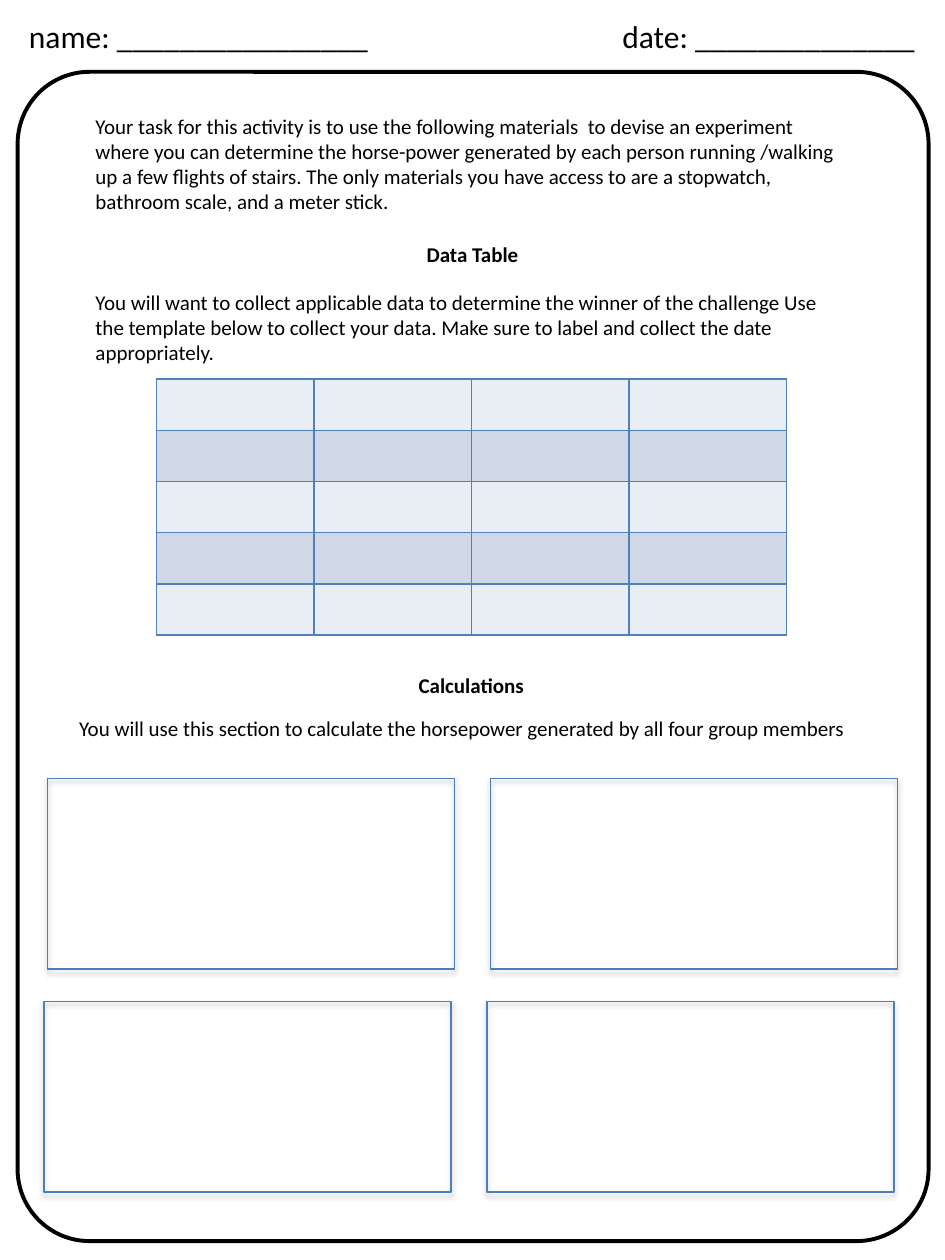
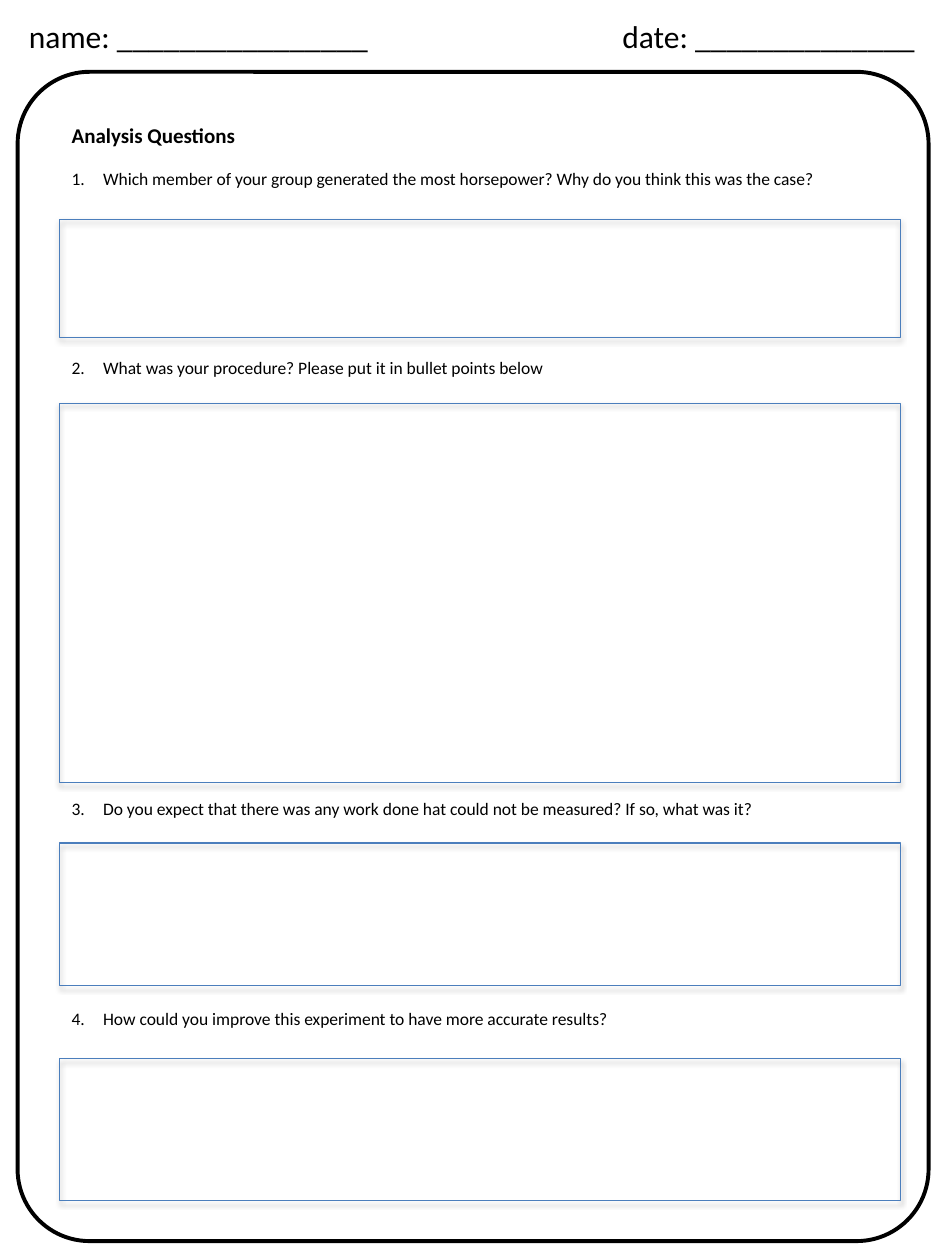
from lxml import etree
from pptx import Presentation
from pptx import util as u
from pptx.dml.color import RGBColor
from pptx.enum import shapes, text
from pptx.oxml import ns

BLACK = RGBColor(0x00, 0x00, 0x00)
BOX_LINE = RGBColor(0x4B, 0x7E, 0xBC)
TABLE_LINE = RGBColor(0x4F, 0x81, 0xBD)
ROW_FILLS = RGBColor(0xE9, 0xED, 0xF4), RGBColor(0xD0, 0xD8, 0xE8)
FONT = "Calibri"
COLS, ROWS = 75, 100
CENTER = text.PP_ALIGN.CENTER

TASK = (
    "Your task for this activity is to use the following materials  to devise an "
    "experiment where you can determine the horse-power generated by each person "
    "running /walking up a few flights of stairs. The only materials you have access "
    "to are a stopwatch, bathroom scale, and a meter stick."
)
COLLECT = (
    "You will want to collect applicable data to determine the winner of the challenge "
    "Use the template below to collect your data. Make sure to label and collect the "
    "date appropriately."
)
CALCULATE = (
    "You will use this section to calculate the horsepower generated by all four "
    "group members"
)
# Each question with the answer lines left above it
QUESTIONS = [
    ("Which member of your group generated the most horsepower? "
     "Why do you think this was the case?", 1),
    ("What was your procedure? Please put it in bullet points below", 8),
    ("Do you expect that there was any work done hat could not be measured? "
     "If so, what was it?", 20),
    ("How could you improve this experiment to have more accurate results?", 9),
]


def add_xml(parent, tag, **attrs):
    return etree.SubElement(parent, ns.qn(tag), {k: str(v) for k, v in attrs.items()})


class Worksheet:
    """Draws on the current slide; lengths are grid columns and rows."""

    def __init__(self):
        self.prs = Presentation()
        self.prs.slide_width, self.prs.slide_height = u.Inches(7.5), u.Inches(10)
        self.s = None

    def place(self, x, y, w, h):
        col, row = self.prs.slide_width / COLS, self.prs.slide_height / ROWS
        return [round(n) for n in (x * col, y * row, w * col, h * row)]

    def page(self):
        """Start a slide with its name line and rounded frame."""
        self.s = self.prs.slides.add_slide(self.prs.slide_layouts[6])
        tf = self.frame(0, -0.2, COLS, 6.1)
        tf.margin_left = u.Inches(0.23)
        tf.vertical_anchor = text.MSO_ANCHOR.MIDDLE
        p = self.paragraph(tf, "name: ________________\tdate: ______________", 18)
        tabs = etree.Element(ns.qn("a:tabLst"))
        add_xml(tabs, "a:tab", pos=u.Inches(4.71), algn="l")
        p._p.get_or_add_pPr().insert(0, tabs)
        sp = self.outline(shapes.MSO_SHAPE.ROUNDED_RECTANGLE,
                          1.4, 5.7, 72.3, 92.8, BLACK, 2.25)
        sp.adjustments[0] = 0.079

    def outline(self, kind, x, y, w, h, color, width):
        sp = self.s.shapes.add_shape(kind, *self.place(x, y, w, h))
        sp.shadow.inherit = False
        sp.fill.background()
        sp.line.color.rgb = color
        sp.line.width = u.Pt(width)
        return sp

    def answer_box(self, x, y, w, h):
        sp = self.outline(shapes.MSO_SHAPE.RECTANGLE, x, y, w, h, BOX_LINE, 0.75)
        effects = sp._element.spPr.find(ns.qn("a:effectLst"))
        shadow = add_xml(effects, "a:outerShdw", blurRad=u.Pt(3.1), dist=u.Pt(1.8),
                         dir=5400000, rotWithShape=0)
        color = add_xml(shadow, "a:srgbClr", val=BLACK)
        add_xml(color, "a:alpha", val=35000)

    def frame(self, x, y, w, h):
        tf = self.s.shapes.add_textbox(*self.place(x, y, w, h)).text_frame
        tf.word_wrap = True
        return tf

    def paragraph(self, tf, words, size=12, bold=False, before=0, align=None,
                  numbered=False):
        p = tf.paragraphs[0] if not tf.text else tf.add_paragraph()
        p.text = words
        if before:
            p.space_before = u.Pt(before)
        if align is not None:
            p.alignment = align
        if numbered:
            pPr = p._p.get_or_add_pPr()
            pPr.set("marL", str(u.Inches(0.25)))
            pPr.set("indent", str(-u.Inches(0.25)))
            add_xml(pPr, "a:buFont", typeface="+mj-lt")
            add_xml(pPr, "a:buAutoNum", type="arabicPeriod")
        p.font.name, p.font.size, p.font.bold = FONT, u.Pt(size), bold
        p.font.color.rgb = BLACK
        return p

    def heading(self, words, x, y):
        self.paragraph(self.frame(x, y, 12.2, 3), words, bold=True, align=CENTER)

    def blank_table(self, x, y, w, h, rows, cols):
        table = self.s.shapes.add_table(rows, cols, *self.place(x, y, w, h)).table
        for r, row in enumerate(table.rows):
            for cell in row.cells:
                tcPr = cell._tc.get_or_add_tcPr()
                for side in ("a:lnL", "a:lnR", "a:lnT", "a:lnB"):
                    ln = add_xml(tcPr, side, w=u.Pt(1))
                    add_xml(add_xml(ln, "a:solidFill"), "a:srgbClr", val=TABLE_LINE)
                cell.fill.solid()
                cell.fill.fore_color.rgb = ROW_FILLS[r % 2]


def experiment_page(ws):
    ws.page()
    ws.paragraph(ws.frame(5.3, 56.3, 64.3, 3), CALCULATE)
    tf = ws.frame(6.6, 8.5, 61.7, 21.2)
    ws.paragraph(tf, TASK)
    ws.paragraph(tf, COLLECT, before=43)
    ws.blank_table(12.4, 30.1, 50, 20.3, rows=5, cols=4)
    ws.heading("Data Table", 31.4, 18.7)
    ws.heading("Calculations", 31.3, 52.9)
    for left, top in ((3.8, 61.8), (3.5, 79.5)):
        for member in range(2):
            ws.answer_box(left + member * 35.15, top, 32.3, 15.1)


def analysis_page(ws):
    ws.page()
    tf = ws.frame(4.7, 9.2, 66.8, 75)
    ws.paragraph(tf, "Analysis Questions", bold=True)
    for question, lines in QUESTIONS:
        ws.paragraph(tf, question, 10, before=12 * lines, numbered=True)
    for top, height in ((17.4, 9.4), (32, 30.1), (66.9, 11.3), (84, 11.3)):
        ws.answer_box(4.7, top, 66.8, height)


def main():
    ws = Worksheet()
    experiment_page(ws)
    analysis_page(ws)
    ws.prs.save("out.pptx")


if __name__ == "__main__":
    main()
